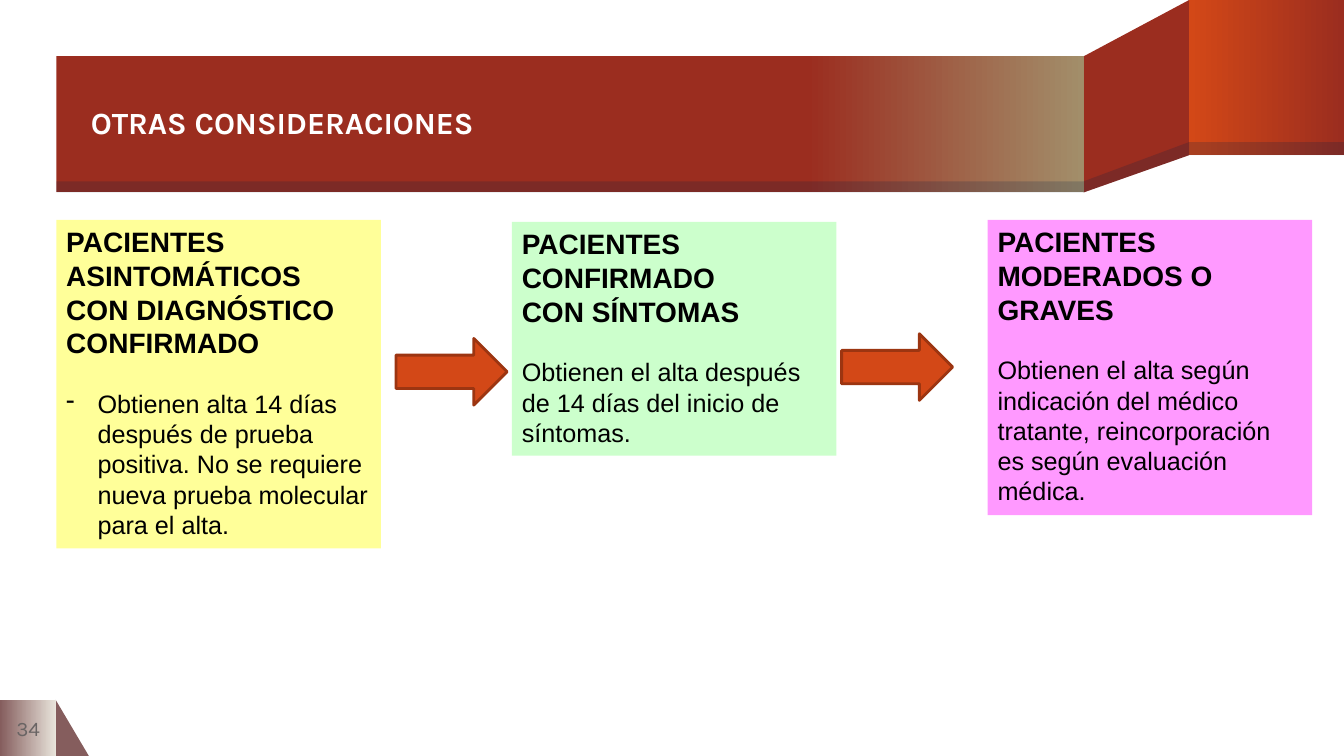
from dataclasses import dataclass
from typing import Optional

from lxml.etree import SubElement
from pptx import Presentation
from pptx.dml.color import RGBColor as RGB
from pptx.enum.shapes import MSO_SHAPE as SHAPE
from pptx.enum.text import MSO_ANCHOR as ANCHOR, PP_ALIGN as ALIGN
from pptx.oxml.ns import qn
from pptx.util import Cm, Pt

COLORS = {
    "white": "FFFFFF", "black": "000000", "gray": "696464",
    "mauve": "855D5D", "cream": "E9E5DC", "brick": "9B2D1F",
    "orange": "D34817", "tan": "A28E6A", "navy": "001F46",
    "outline": "9C3511", "yellow": "FFFF99", "green": "CCFFCC",
    "pink": "FF99FF",
}
BANNER_LEFT, FOLD_LEFT, FOLD_RIGHT = 1.42, 27.31, 29.97
BANNER_W, SIDE_W = FOLD_LEFT - BANNER_LEFT, 3.9
FOOT_TOP, FOOT_SIZE = 17.63, 1.42
CARD_W = 8.18


@dataclass
class Block:
    left: float
    top: float
    width: float
    height: float
    color: str
    end_color: Optional[str] = None
    start: float = 0
    alpha: Optional[int] = None
    kind: SHAPE = SHAPE.RECTANGLE
    outline: Optional[str] = None


@dataclass
class Fold:
    points: list[tuple[float, float]]
    color: str
    alpha: Optional[int] = None


@dataclass
class Card:
    block: Block
    heading: list[str]
    body: str
    dash: bool = False


def rgb(name: str) -> RGB:
    return RGB.from_string(COLORS[name])


def paint(sp, color: str, alpha: Optional[int] = None) -> None:
    sp.shadow.inherit = False
    sp.line.fill.background()
    sp.fill.solid()
    sp.fill.fore_color.rgb = rgb(color)
    if alpha is not None:
        clr = sp._element.spPr.find(qn("a:solidFill")).find(qn("a:srgbClr"))
        SubElement(clr, qn("a:alpha")).set("val", str(alpha * 1000))


def draw_block(s, b: Block):
    sp = s.shapes.add_shape(b.kind, Cm(b.left), Cm(b.top), Cm(b.width), Cm(b.height))
    paint(sp, b.color, b.alpha)
    if b.end_color:
        sp.fill.gradient()
        sp.fill.gradient_angle = 0
        first, last = sp.fill.gradient_stops
        first.position, last.position = b.start, 1
        first.color.rgb, last.color.rgb = rgb(b.color), rgb(b.end_color)
    if b.outline:
        sp.line.color.rgb = rgb(b.outline)
        sp.line.width = Pt(2)
    return sp


def draw_fold(s, fold: Fold) -> None:
    points = [(Cm(x), Cm(y)) for x, y in fold.points]
    builder = s.shapes.build_freeform(*points[0])
    builder.add_line_segments(points[1:], close=True)
    paint(builder.convert_to_shape(), fold.color, fold.alpha)


def add_run(p, text: str, size: float, font: str, color: str, bold: bool = False) -> None:
    r = p.add_run()
    r.text = text
    r.font.size, r.font.name, r.font.bold = Pt(size), font, bold
    r.font.color.rgb = rgb(color)


def add_label(s, left: float, top: float, width: float, height: float):
    tf = s.shapes.add_textbox(Cm(left), Cm(top), Cm(width), Cm(height)).text_frame
    tf.word_wrap = True
    tf.vertical_anchor = ANCHOR.MIDDLE
    tf.margin_left = tf.margin_right = tf.margin_top = tf.margin_bottom = 0
    return tf.paragraphs[0]


def draw_card(s, card: Card) -> None:
    tf = draw_block(s, card.block).text_frame
    tf.word_wrap = True
    tf.vertical_anchor = ANCHOR.TOP
    for i, line in enumerate(card.heading):
        p = tf.paragraphs[0] if i == 0 else tf.add_paragraph()
        p.alignment = ALIGN.LEFT
        add_run(p, line, 20, "Arial", "black", bold=True)
    p = tf.add_paragraph()
    p.alignment = ALIGN.LEFT
    p.space_before = Pt(20.7)
    add_run(p, card.body, 18, "Arial", "black")
    if card.dash:
        pPr = p._p.get_or_add_pPr()
        pPr.set("marL", str(Cm(0.79)))
        pPr.set("indent", str(-Cm(0.79)))
        SubElement(pPr, qn("a:buChar")).set("char", "-")


FOOTER = [
    Block(1.4, FOOT_TOP, 0.84, FOOT_SIZE, "mauve", kind=SHAPE.RIGHT_TRIANGLE),
    Block(0, FOOT_TOP, FOOT_SIZE, FOOT_SIZE, "mauve", "cream"),
]
RIBBON = [
    Fold([(FOLD_RIGHT, 0), (FOLD_LEFT, 1.42), (FOLD_LEFT, 4.85), (FOLD_RIGHT, 3.91)], "brick"),
    Block(FOLD_RIGHT, 0, SIDE_W, 3.91, "orange", "brick"),
    Block(BANNER_LEFT, 1.42, BANNER_W, 3.43, "brick", "tan", start=0.73),
    Fold([(FOLD_RIGHT, 3.58), (FOLD_LEFT, 4.57), (FOLD_LEFT, 4.85), (FOLD_RIGHT, 3.91)],
         "navy", 20),
    Block(FOLD_RIGHT, 3.58, SIDE_W, 0.33, "navy", alpha=20),
    Block(BANNER_LEFT, 4.57, BANNER_W, 0.28, "navy", alpha=20),
]
CARDS = [
    Card(Block(1.42, 5.54, CARD_W, 8.28, "yellow"),
         ["PACIENTES ASINTOMÁTICOS CON DIAGNÓSTICO CONFIRMADO"],
         "Obtienen alta 14 días después de prueba positiva. "
         "No se requiere nueva prueba molecular para el alta.", dash=True),
    Card(Block(12.9, 5.59, CARD_W, 5.89, "green"),
         ["PACIENTES CONFIRMADO", "CON SÍNTOMAS"],
         "Obtienen el alta después de 14 días del inicio de síntomas."),
    Card(Block(24.89, 5.54, CARD_W, 7.44, "pink"),
         ["PACIENTES MODERADOS O GRAVES"],
         "Obtienen el alta según indicación del médico tratante, "
         "reincorporación es según evaluación médica."),
]
ARROWS = [
    Block(left, top, 2.8, 1.68, "orange", kind=SHAPE.RIGHT_ARROW, outline="outline")
    for left, top in [(9.98, 8.53), (21.21, 8.41)]
]


def main() -> None:
    prs = Presentation()
    prs.slide_width, prs.slide_height = Cm(33.87), Cm(19.05)
    s = prs.slides.add_slide(prs.slide_layouts[6])
    for part in FOOTER + RIBBON:
        if isinstance(part, Fold):
            draw_fold(s, part)
        else:
            draw_block(s, part)

    title = add_label(s, 2.29, 1.45, 25.02, 3.4)
    title.line_spacing = 0.9
    add_run(title, "OTRAS CONSIDERACIONES", 22, "Karla", "white", bold=True)
    number = add_label(s, 0, FOOT_TOP, FOOT_SIZE, FOOT_SIZE)
    number.alignment = ALIGN.CENTER
    add_run(number, "34", 14.7, "Karla", "gray")

    for card in CARDS:
        draw_card(s, card)
    for arrow in ARROWS:
        draw_block(s, arrow)
    prs.save("out.pptx")


if __name__ == "__main__":
    main()
